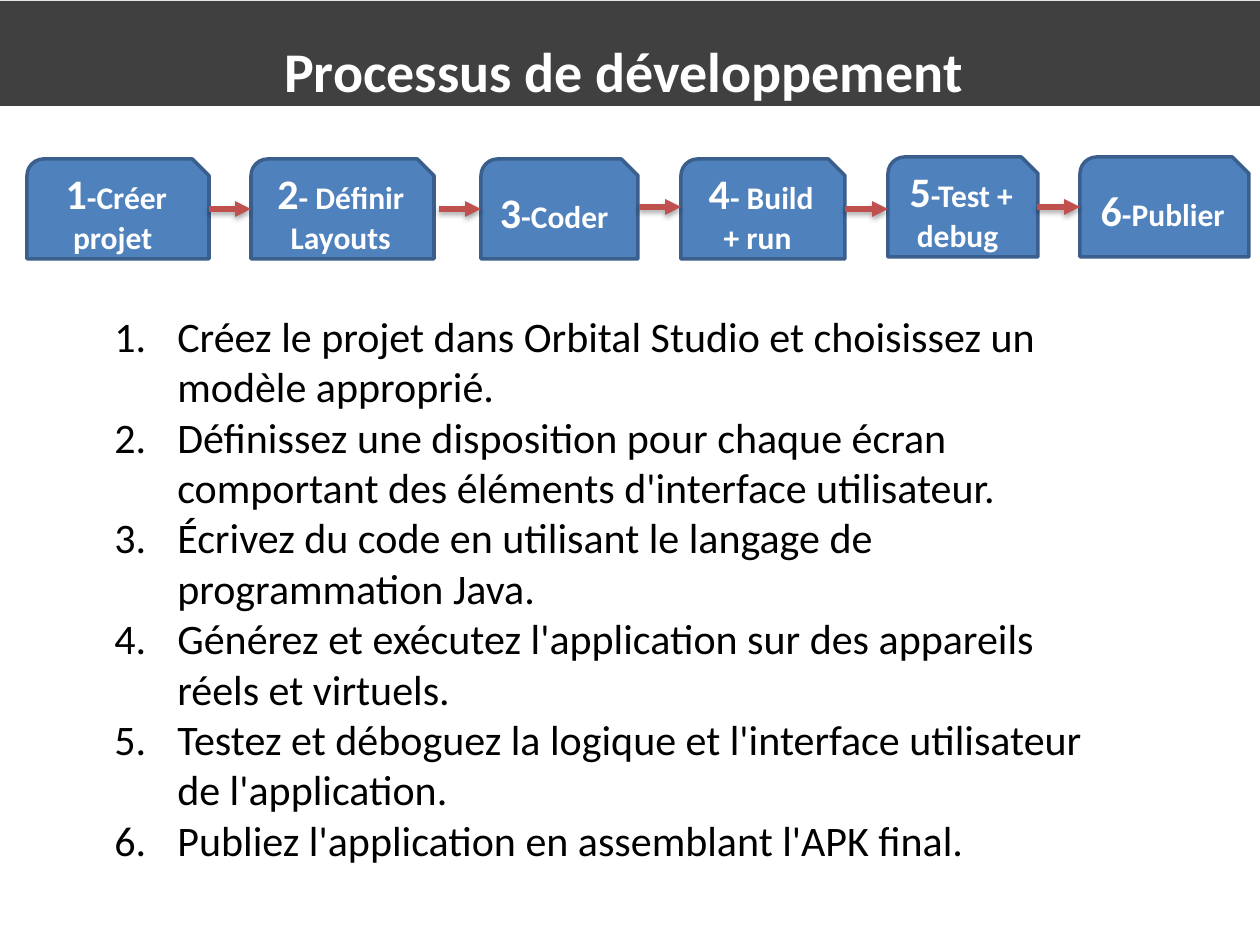
from dataclasses import dataclass

import pptx
import pptx.dml.color
import pptx.enum.shapes
import pptx.enum.text
import pptx.oxml
import pptx.oxml.ns
import pptx.util

SCALE = 914400 / 126  # EMU in one px
FONT = "Calibri"
COLORS = {
    "bar": "404040",
    "box": "4F81BD",
    "edge": "3A5F8C",
    "arrow": "C0504D",
    "light": "FFFFFF",
    "dark": "000000",
}
SHADOW = (
    f'<a:effectLst {pptx.oxml.ns.nsdecls("a")}>'
    '<a:outerShdw blurRad="39370" dist="22860" dir="5400000" rotWithShape="0">'
    '<a:srgbClr val="000000"><a:alpha val="35000"/></a:srgbClr>'
    '</a:outerShdw></a:effectLst>'
)


@dataclass
class Step:
    label: str
    left: int
    top: int
    width: int


@dataclass
class Arrow:
    start: int
    end: int
    y: int


STEPS = [
    Step("-Créer projet ", 27, 159, 182),
    Step("- Définir Layouts", 251, 159, 183),
    Step("-Coder ", 481, 159, 157),
    Step("- Build + run ", 681, 159, 164),
    Step("-Test + debug ", 888, 157, 150),
    Step("-Publier ", 1080, 157, 169),
]
STEP_H = 100
ARROWS = [
    Arrow(209, 251, 209),
    Arrow(439, 481, 209),
    Arrow(639, 681, 207),
    Arrow(845, 888, 209),
    Arrow(1037, 1080, 207),
]
TASKS = [
    "Créez le projet dans Orbital Studio et choisissez un modèle approprié.",
    "Définissez une disposition pour chaque écran comportant des éléments "
    "d'interface utilisateur.",
    "Écrivez du code en utilisant le langage de programmation Java.",
    "Générez et exécutez l'application sur des appareils réels et virtuels.",
    "Testez et déboguez la logique et l'interface utilisateur de l'application.",
    "Publiez l'application en assemblant l'APK final.",
]


def px(size: int) -> int:
    return round(size * SCALE)


def color(name: str) -> pptx.dml.color.RGBColor:
    return pptx.dml.color.RGBColor.from_string(COLORS[name])


def paint(shape, name: str) -> None:
    shape.fill.solid()
    shape.fill.fore_color.rgb = color(name)


def style(run, size: int, name: str, bold: bool) -> None:
    run.font.name = FONT
    run.font.size = pptx.util.Pt(size)
    run.font.bold = bold
    run.font.color.rgb = color(name)


def draw_title(slide, text: str) -> None:
    title = slide.shapes.title
    title.left, title.top, title.width, title.height = px(0), px(1), px(1260), px(105)
    paint(title, "bar")
    frame = title.text_frame
    frame.text = text
    frame.vertical_anchor = pptx.enum.text.MSO_ANCHOR.MIDDLE
    para = frame.paragraphs[0]
    para.alignment = pptx.enum.text.PP_ALIGN.CENTER
    para.line_spacing = 1.5
    style(para.runs[0], 32, "light", True)


def draw_step(slide, num: int, step: Step) -> None:
    box = slide.shapes.add_shape(
        pptx.enum.shapes.MSO_SHAPE.SNIP_ROUND_RECTANGLE,
        px(step.left), px(step.top), px(step.width), px(STEP_H))
    box.shadow.inherit = False
    paint(box, "box")
    box.line.color.rgb = color("edge")
    box.line.width = pptx.util.Pt(2)
    box.text_frame.vertical_anchor = pptx.enum.text.MSO_ANCHOR.MIDDLE
    para = box.text_frame.paragraphs[0]
    para.alignment = pptx.enum.text.PP_ALIGN.CENTER
    for text, size in ((str(num), 24), (step.label, 18)):
        run = para.add_run()
        run.text = text
        style(run, size, "light", True)


def draw_arrow(slide, arrow: Arrow) -> None:
    link = slide.shapes.add_connector(
        pptx.enum.shapes.MSO_CONNECTOR.STRAIGHT,
        px(arrow.start), px(arrow.y), px(arrow.end), px(arrow.y))
    link.line.color.rgb = color("arrow")
    link.line.width = pptx.util.Pt(3)
    head = pptx.oxml.parse_xml(
        f'<a:tailEnd {pptx.oxml.ns.nsdecls("a")} type="triangle"/>')
    link.line._get_or_add_ln().append(head)
    link._element.spPr.append(pptx.oxml.parse_xml(SHADOW))


def draw_tasks(slide, tasks: list[str]) -> None:
    box = slide.shapes.add_textbox(px(102), px(304), px(1022), px(572))
    frame = box.text_frame
    frame.word_wrap = True
    frame.auto_size = pptx.enum.text.MSO_AUTO_SIZE.SHAPE_TO_FIT_TEXT
    frame.text = "\n".join(tasks)
    for para in frame.paragraphs:
        style(para.runs[0], 24, "dark", False)
        props = para._p.get_or_add_pPr()
        props.set("marL", str(px(63)))
        props.set("indent", str(-px(63)))
        props.append(pptx.oxml.parse_xml(
            f'<a:buAutoNum {pptx.oxml.ns.nsdecls("a")} type="arabicPeriod"/>'))


def main() -> None:
    deck = pptx.Presentation()
    deck.slide_width, deck.slide_height = px(1260), px(945)
    slide = deck.slides.add_slide(deck.slide_layouts[5])
    draw_title(slide, "Processus de développement ")
    draw_tasks(slide, TASKS)
    for num, step in enumerate(STEPS, 1):
        draw_step(slide, num, step)
    for arrow in ARROWS:
        draw_arrow(slide, arrow)
    deck.save("out.pptx")


if __name__ == "__main__":
    main()
